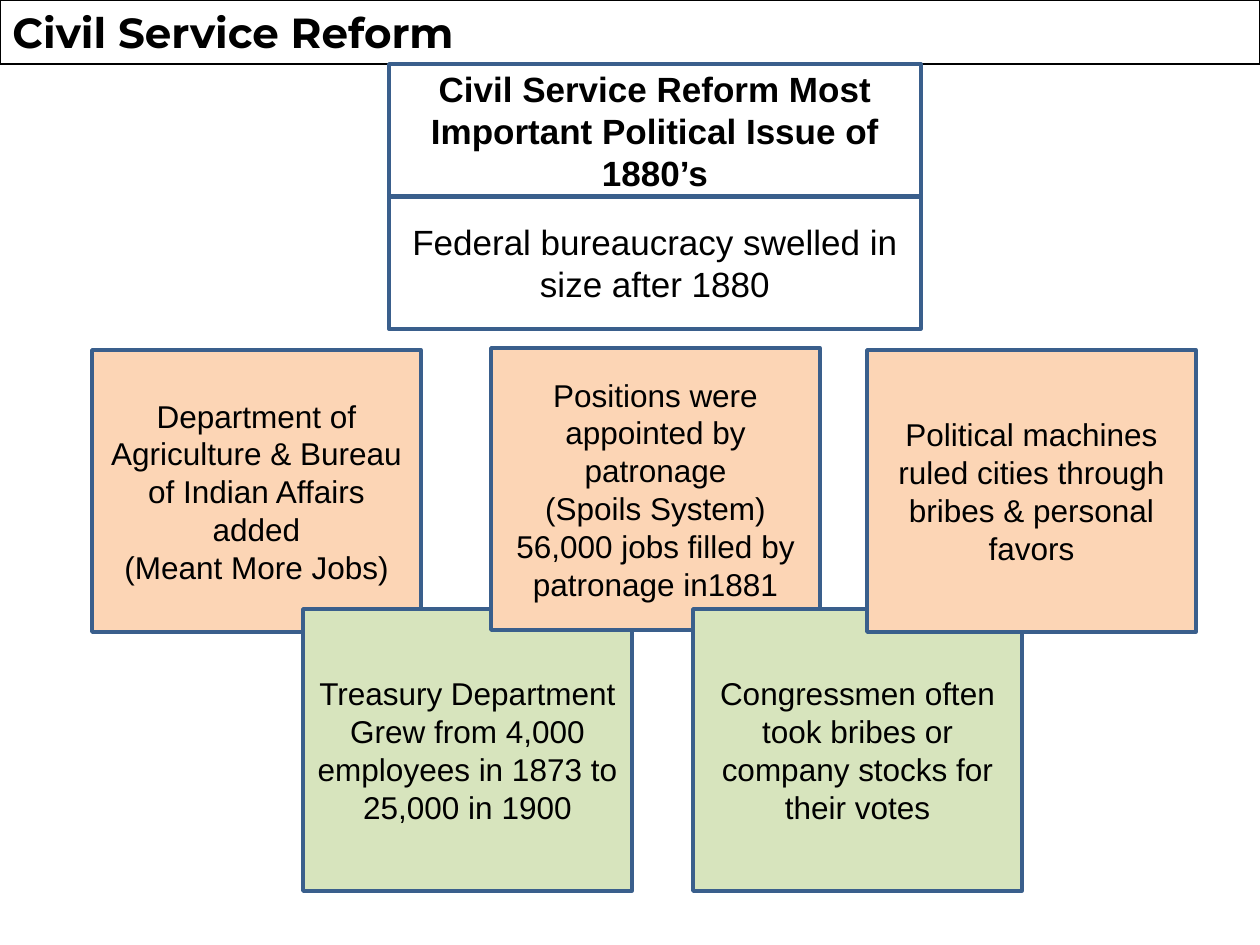
from dataclasses import dataclass

from pptx import Presentation
from pptx.dml.color import RGBColor
from pptx.enum.shapes import MSO_SHAPE
from pptx.enum.text import MSO_ANCHOR, PP_ALIGN
from pptx.util import Emu, Pt

SCALE = 914400 / 126


@dataclass(frozen=True)
class Theme:
    ink: str = "000000"
    paper: str = "FFFFFF"
    edge: str = "3A5F8C"
    peach: str = "FCD5B5"
    green: str = "D7E4BD"
    title_font: str = "Montserrat"
    body_font: str = "Arial"
    title_size: int = 24
    head_size: int = 20
    card_size: int = 18
    title_line: float = 0.75
    card_line: float = 2


THEME = Theme()


def px(n):
    return Emu(round(n * SCALE))


def add_box(slide, area, fill, edge, weight):
    """Draw a rectangle; a fill of None leaves it see-through."""
    box = slide.shapes.add_shape(MSO_SHAPE.RECTANGLE, *map(px, area))
    box.shadow.inherit = False
    if fill:
        box.fill.solid()
        box.fill.fore_color.rgb = RGBColor.from_string(fill)
    else:
        box.fill.background()
    box.line.color.rgb = RGBColor.from_string(edge)
    box.line.width = Pt(weight)
    return box


def write(box, lines, font, size, bold=False, align=PP_ALIGN.CENTER,
          anchor=MSO_ANCHOR.MIDDLE):
    frame = box.text_frame
    frame.word_wrap = True
    frame.vertical_anchor = anchor
    for i, line in enumerate(lines):
        para = frame.add_paragraph() if i else frame.paragraphs[0]
        para.alignment = align
        run = para.add_run()
        run.text = line
        run.font.name = font
        run.font.size = Pt(size)
        run.font.bold = bold
        run.font.color.rgb = RGBColor.from_string(THEME.ink)


def add_title(slide, text):
    box = add_box(slide, (0, 0, 1260, 64), THEME.paper, THEME.ink,
                  THEME.title_line)
    write(box, [text], THEME.title_font, THEME.title_size, True,
          PP_ALIGN.LEFT, MSO_ANCHOR.TOP)


def add_head(slide, row, text, bold):
    high = 133
    area = (389, 64 + row * (high - 1), 532, high)
    box = add_box(slide, area, None, THEME.edge, THEME.card_line)
    write(box, [text], THEME.body_font, THEME.head_size, bold)


def add_card(slide, left, top, fill, *lines):
    box = add_box(slide, (left, top, 329, 282), fill, THEME.edge,
                  THEME.card_line)
    write(box, lines, THEME.body_font, THEME.card_size)


def main():
    deck = Presentation()
    deck.slide_width, deck.slide_height = px(1260), px(945)
    slide = deck.slides.add_slide(deck.slide_layouts[6])

    add_title(slide, "Civil Service Reform")
    add_head(slide, 0, "Civil Service Reform Most Important Political Issue "
             "of 1880’s", True)
    add_head(slide, 1, "Federal bureaucracy swelled in size after 1880", False)

    # Cards run left to right, each overlapping the one before.
    cards = [
        (92, 350, THEME.peach, "Department of Agriculture & Bureau of Indian "
         "Affairs added", "(Meant More Jobs)"),
        (303, 609, THEME.green, "Treasury Department Grew from 4,000 "
         "employees in 1873 to 25,000 in 1900"),
        (491, 348, THEME.peach, "Positions were appointed by patronage",
         "(Spoils System)", "56,000 jobs filled by patronage in1881"),
        (693, 609, THEME.green, "Congressmen often took bribes or company "
         "stocks for their votes"),
        (867, 350, THEME.peach, "Political machines ruled cities through "
         "bribes & personal favors"),
    ]
    for card in cards:
        add_card(slide, *card)

    deck.save("out.pptx")


if __name__ == "__main__":
    main()
